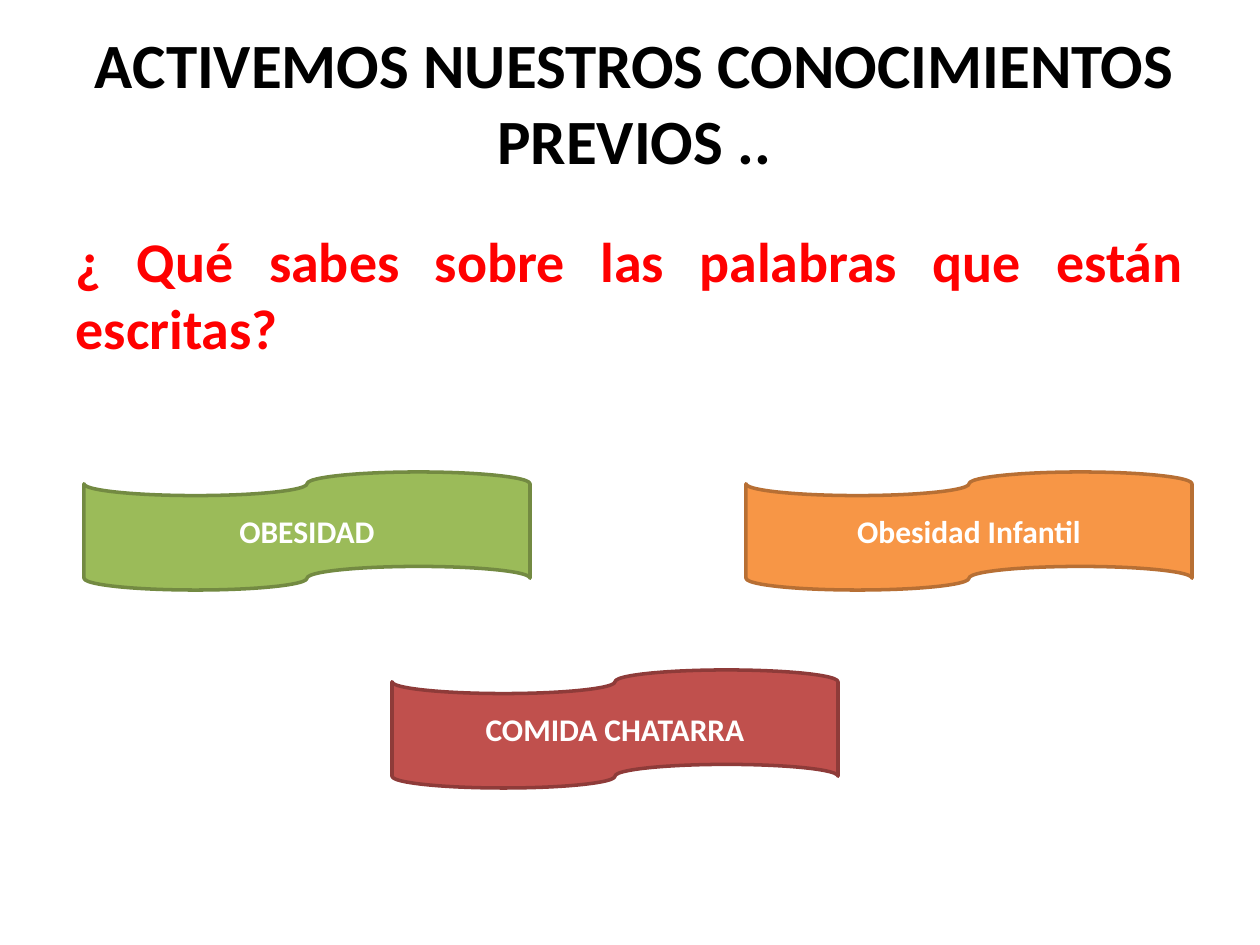
from pptx import Presentation
from pptx.dml.color import RGBColor
from pptx.enum.shapes import MSO_SHAPE
from pptx.enum.text import MSO_ANCHOR, MSO_AUTO_SIZE, PP_ALIGN
from pptx.util import Emu, Pt
from lxml import etree

EMU_PER_PX = 914400 // 126
TAPE = MSO_SHAPE.FLOWCHART_PUNCHED_TAPE
CENTER, JUSTIFY = PP_ALIGN.CENTER, PP_ALIGN.JUSTIFY
TOP, MIDDLE = MSO_ANCHOR.TOP, MSO_ANCHOR.MIDDLE
NO_AUTOFIT = MSO_AUTO_SIZE.NONE
DRAWING_NS = "http://schemas.openxmlformats.org/drawingml/2006/main"


def px(length):
    return Emu(length * EMU_PER_PX)


def rgb(value):
    return RGBColor.from_string(value)


class SlideBuilder:
    font_name = "Calibri"

    def __init__(self, slide):
        self.slide = slide

    def set_text(self, shape, text, size, color, align, anchor):
        frame = shape.text_frame
        frame.text = text
        frame.word_wrap = True
        frame.auto_size = NO_AUTOFIT
        frame.vertical_anchor = anchor
        paragraph = frame.paragraphs[0]
        paragraph.alignment = align
        font = paragraph.font
        font.name, font.size, font.bold = self.font_name, Pt(size), True
        font.color.rgb = rgb(color)
        return paragraph

    def place(self, shape, left, top, width, height):
        shape.left, shape.top = px(left), px(top)
        shape.width, shape.height = px(width), px(height)

    def title(self, text, *box):
        heading = self.slide.shapes.title
        self.place(heading, *box)
        self.set_text(heading, text, 36, "000000", CENTER, MIDDLE)

    def body(self, text, *box):
        question = self.slide.placeholders[1]
        self.place(question, *box)
        paragraph = self.set_text(question, text, 32, "FF0000", JUSTIFY, TOP)
        # Plain paragraph: no bullet, no hanging indent
        properties = paragraph._p.get_or_add_pPr()
        properties.set("marL", "0")
        properties.set("indent", "0")
        bullet_none = etree.Element(f"{{{DRAWING_NS}}}buNone")
        properties.insert(0, bullet_none)

    def banner(self, text, fill, outline, *box):
        tape = self.slide.shapes.add_shape(TAPE, *map(px, box))
        tape.shadow.inherit = False
        tape.fill.solid()
        tape.fill.fore_color.rgb = rgb(fill)
        tape.line.color.rgb = rgb(outline)
        tape.line.width = Pt(2)
        self.set_text(tape, text, 18, "FFFFFF", CENTER, MIDDLE)


def main():
    presentation = Presentation()
    presentation.slide_width, presentation.slide_height = px(1260), px(945)
    layout = presentation.slide_layouts[1]
    builder = SlideBuilder(presentation.slides.add_slide(layout))

    # Heading and question
    builder.title("ACTIVEMOS NUESTROS CONOCIMIENTOS PREVIOS ..", 63, 38, 1143, 127)
    builder.body("¿ Qué sabes sobre las palabras que están escritas?", 63, 220, 1134, 624)

    # Key words on banners of one size
    key_words = [
        ("OBESIDAD", "9BBB59", "738A42", 84, 472),
        ("COMIDA CHATARRA", "C0504D", "8E3B39", 392, 670),
        ("Obesidad Infantil", "F79646", "B76F34", 746, 472),
    ]
    for word, fill, outline, left, top in key_words:
        builder.banner(word, fill, outline, left, top, 446, 118)

    presentation.save("out.pptx")


if __name__ == "__main__":
    main()
